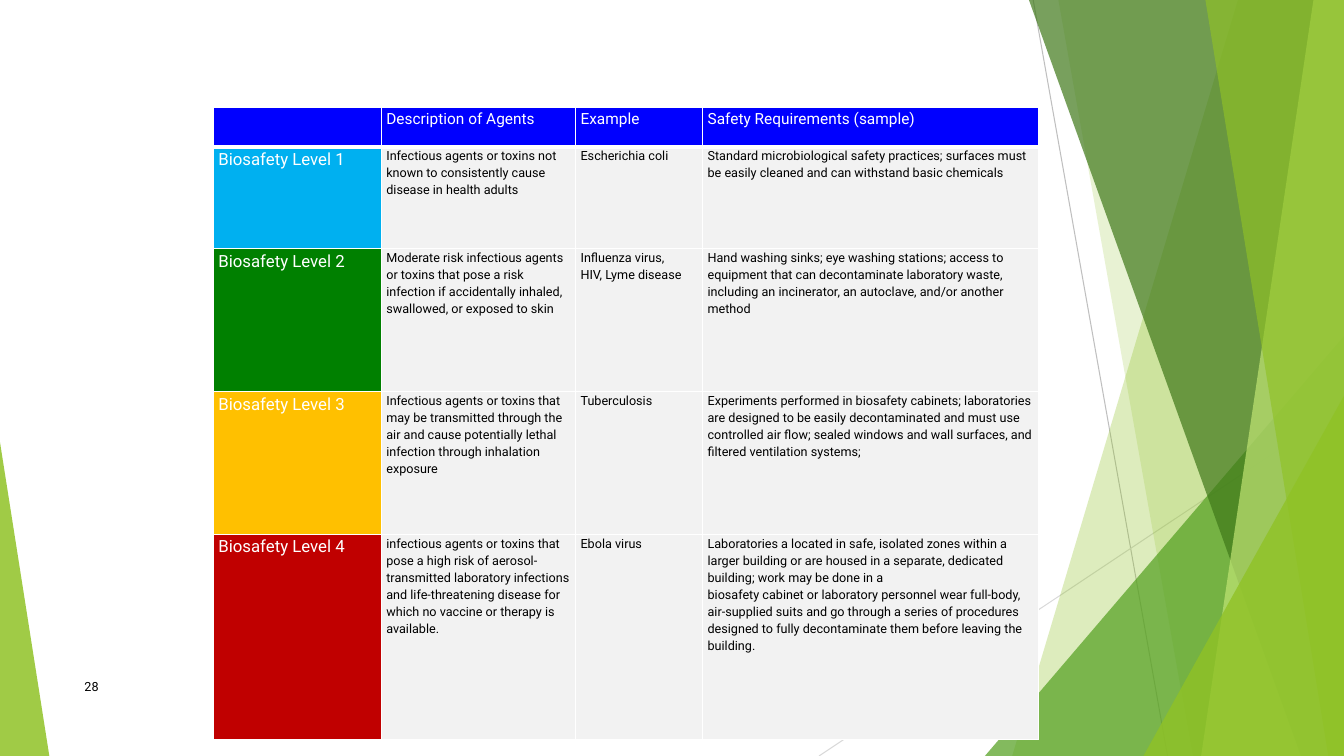
from lxml.etree import SubElement
from pptx import Presentation
from pptx.dml.color import RGBColor
from pptx.enum.shapes import MSO_CONNECTOR as Link, MSO_SHAPE as Shape
from pptx.enum.text import MSO_ANCHOR as Anchor
from pptx.oxml import parse_xml
from pptx.oxml.ns import nsdecls, qn
from pptx.util import Pt

PX = 9525
WIDE, HIGH = 1280, 720
FONT = "Roboto"
WHITE = RGBColor(0xFF, 0xFF, 0xFF)
BLACK = RGBColor(0x00, 0x00, 0x00)
GRAY = RGBColor(0xBF, 0xBF, 0xBF)
PALE = RGBColor(0xD9, 0xD9, 0xD9)
LIME = RGBColor(0x90, 0xC2, 0x26)
LEAF = RGBColor(0x54, 0xA0, 0x21)
MOSS = RGBColor(0x3F, 0x78, 0x19)
MINT = RGBColor(0xC0, 0xE4, 0x74)
BLUE = RGBColor(0x00, 0x00, 0xFF)
SKY = RGBColor(0x00, 0xB0, 0xF0)
GREEN = RGBColor(0x00, 0x80, 0x00)
GOLD = RGBColor(0xFF, 0xC0, 0x00)
RED = RGBColor(0xC0, 0x00, 0x00)
SMOKE = RGBColor(0xF2, 0xF2, 0xF2)

COLS = [160, 185, 121, 320]
ROWS = [38, 97, 136, 136, 195]
HEADS = ["", "Description of Agents", "Example", "Safety Requirements (sample)"]
LEVELS = [
    (SKY, "Infectious agents or toxins not known to consistently cause disease in health adults",
     "Escherichia coli",
     "Standard microbiological safety practices; surfaces must be easily cleaned "
     "and can withstand basic chemicals"),
    (GREEN, "Moderate risk infectious agents or toxins that pose a risk infection "
     "if accidentally inhaled, swallowed, or exposed to skin",
     "Influenza virus,\nHIV, Lyme disease",
     "Hand washing sinks; eye washing stations; access to equipment that can decontaminate "
     "laboratory waste, including an incinerator, an autoclave, and/or another method"),
    (GOLD, "Infectious agents or toxins that may be transmitted through the air "
     "and cause potentially lethal infection through inhalation exposure",
     "Tuberculosis",
     "Experiments performed in biosafety cabinets; laboratories are designed to be easily "
     "decontaminated and must use controlled air flow; sealed windows and wall surfaces, "
     "and filtered ventilation systems;"),
    (RED, "infectious agents or toxins that pose a high risk of aerosol-transmitted laboratory "
     "infections and life-threatening disease for which no vaccine or therapy is available.",
     "Ebola virus",
     "Laboratories a located in safe, isolated zones within a larger building or are housed "
     "in a separate, dedicated building; work may be done in a\n"
     "biosafety cabinet or laboratory personnel wear full-body, air-supplied suits and go "
     "through a series of procedures designed to fully decontaminate them before leaving "
     "the building."),
]


def emu(*nums):
    """Turn px lengths into EMU."""
    return [num * PX for num in nums]


def paint(shape, color, alpha):
    """Fill a shape with a see-through color and no outline."""
    shape.shadow.inherit = False
    shape.fill.solid()
    shape.fill.fore_color.rgb = color
    shape.line.fill.background()
    tint = shape.fill._xPr.find(qn("a:solidFill"))[0]
    SubElement(tint, qn("a:alpha"), val=str(alpha * 1000))


def ray(slide, start, end, color):
    """Draw a thin line."""
    line = slide.shapes.add_connector(Link.STRAIGHT, *emu(*start, *end))
    line.line.color.rgb = color
    line.line.width = Pt(0.75)
    SubElement(line._element.spPr, qn("a:effectLst"))


def wedge(slide, box, tip, color, alpha):
    """Draw a triangle with its tip at one side of the box."""
    shape = slide.shapes.add_shape(Shape.ISOSCELES_TRIANGLE, *emu(*box))
    shape.adjustments[0] = tip
    paint(shape, color, alpha)


def band(slide, box, top, base, color, alpha):
    """Draw a slanted band that runs to the right edge of the box."""
    left, y, width, height = box
    right, foot = left + width, y + height
    pen = slide.shapes.build_freeform(left + top, y, scale=PX)
    pen.add_line_segments([(right, y), (right, foot), (left + base, foot)], close=True)
    paint(pen.convert_to_shape(), color, alpha)


def facets(slide, box):
    """Draw the green facets from back to front."""
    left, top, width, height = box
    right, foot = left + width, top + height
    ray(slide, (left + 204, top), (left + 332, foot), GRAY)
    ray(slide, (right, top + 387), (left, foot), PALE)

    def corner(wide, high, color, alpha):
        """Draw a triangle in the lower right corner."""
        wedge(slide, (right - wide, foot - high, wide, high), 1, color, alpha)

    band(slide, box, 399, 184, LIME, 30)
    band(slide, box, 228, 356, LIME, 20)
    corner(342, 400, LEAF, 72)
    band(slide, box, 200, 459, MOSS, 70)
    band(slide, box, 471, 364, MINT, 70)
    band(slide, box, 368, 485, LIME, 65)
    corner(191, 343, LIME, 80)


def write(para, text, size, color):
    """Add one run to a paragraph."""
    run = para.add_run()
    run.text = text
    run.font.name = FONT
    run.font.size = Pt(size)
    run.font.color.rgb = color


def edge(cell, side, width):
    """Add a white border to one side of a cell."""
    cell._tc.get_or_add_tcPr().append(parse_xml(
        f'<a:ln{side} {nsdecls("a")} w="{Pt(width)}"><a:solidFill>'
        f'<a:srgbClr val="{WHITE}"/></a:solidFill></a:ln{side}>'))


def fill(cell, text, size, color, back, head, below):
    """Set the text, borders and fill of a cell."""
    cell.margin_left = cell.margin_right = 5 * PX
    cell.margin_top = cell.margin_bottom = 0
    for side in "LRTB":
        thick = (head and side == "B") or (below and side == "T")
        edge(cell, side, 3 if thick else 1)
    cell.fill.solid()
    cell.fill.fore_color.rgb = back
    frame = cell.text_frame
    for i, part in enumerate(text.split("\n") if text else []):
        para = frame.add_paragraph() if i else frame.paragraphs[0]
        para.line_spacing = 1.15
        write(para, part, size, color)


def grid(slide, box):
    """Build the table of biosafety levels."""
    table = slide.shapes.add_table(len(ROWS), len(COLS), *emu(*box)).table
    table.first_row = table.horz_banding = False
    for col, width in zip(table.columns, COLS):
        col.width = width * PX
    for row, height in zip(table.rows, ROWS):
        row.height = height * PX
    for c, text in enumerate(HEADS):
        fill(table.cell(0, c), text, 11, WHITE, BLUE, True, False)
    for r, (tone, *texts) in enumerate(LEVELS, 1):
        fill(table.cell(r, 0), f"Biosafety Level {r}", 12, WHITE, tone, False, r == 1)
        for c, text in enumerate(texts, 1):
            fill(table.cell(r, c), text, 9, BLACK, SMOKE, False, r == 1)


def folio(slide, box):
    """Write the page number."""
    frame = slide.shapes.add_textbox(*emu(*box)).text_frame
    frame.word_wrap = True
    frame.vertical_anchor = Anchor.MIDDLE
    write(frame.paragraphs[0], "28", 9, BLACK)


def main():
    """Build and save the slide."""
    deck = Presentation()
    deck.slide_width, deck.slide_height = emu(WIDE, HIGH)
    slide = deck.slides.add_slide(deck.slide_layouts[6])
    facets(slide, (780, 0, 500, HIGH))
    wedge(slide, (0, 421, 47, 299), 0, LIME, 85)
    folio(slide, (71, 635, 661, 38))
    grid(slide, (203, 102, sum(COLS), sum(ROWS)))
    deck.save("out.pptx")


if __name__ == "__main__":
    main()
